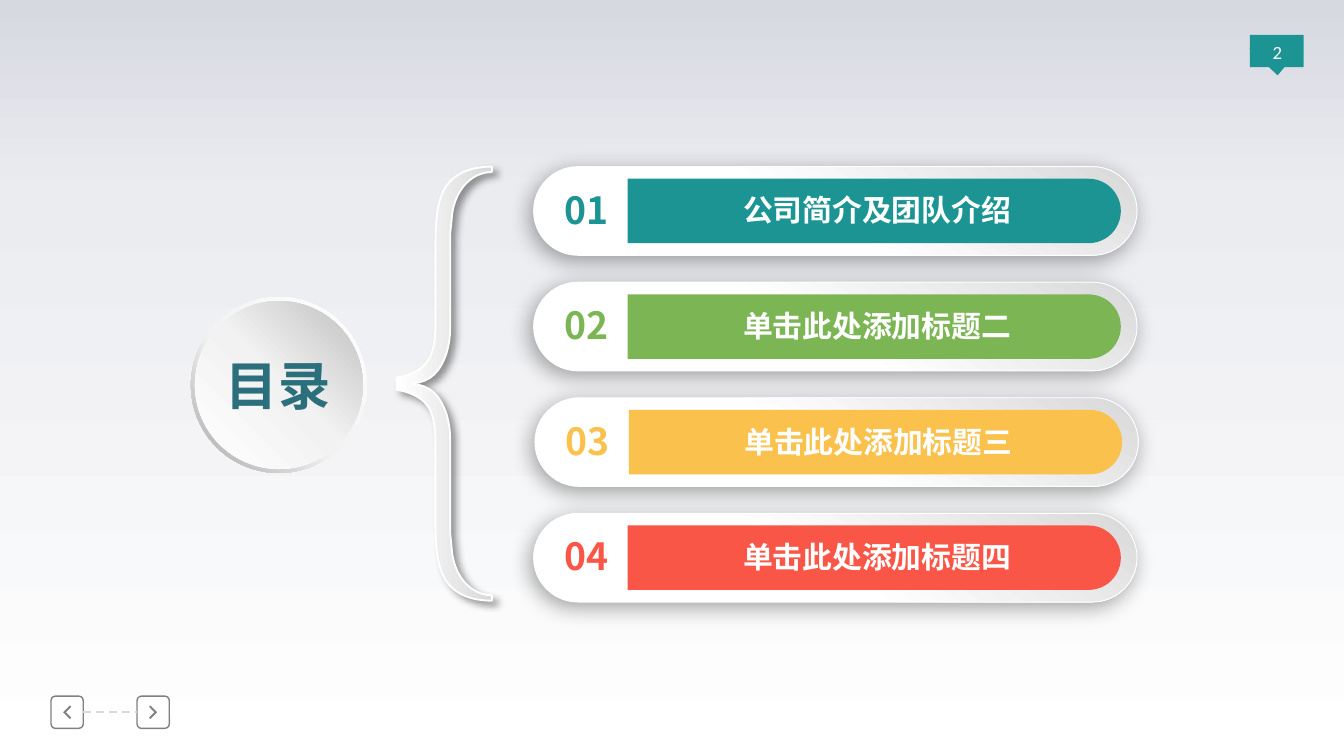
from math import cos, pi, sin

from lxml.etree import SubElement
from pptx import Presentation
from pptx.dml.color import RGBColor
from pptx.enum.dml import MSO_LINE
from pptx.enum.shapes import MSO_CONNECTOR, MSO_SHAPE
from pptx.enum.text import MSO_ANCHOR, MSO_AUTO_SIZE, PP_ALIGN
from pptx.oxml.ns import qn
from pptx.util import Inches, Pt

COLORS = {
    "teal": "1C9494", "green": "7CB554", "yellow": "FAC14D", "red": "F95647",
    "title": "2B6F7D", "white": "FFFFFF", "gray": "808080", "edge": "D9D9D9",
    "sky": "D7D9E1", "haze": "EBECF0", "pearl": "F2F2F2", "silver": "BFBFBF",
    "steel": "A6A6A6", "black": "000000",
}
RGB = {name: RGBColor.from_string(value) for name, value in COLORS.items()}
CJK = "Noto Sans CJK SC"


def write_text(box, text, size, color, font=CJK, bold=True, align=PP_ALIGN.LEFT,
               anchor=MSO_ANCHOR.TOP, wrap=False, grow=True, margins=None):
    """Fill a box with one formatted run; margins are left, top, right, bottom."""
    frame = box.text_frame
    frame.word_wrap = wrap
    frame.vertical_anchor = anchor
    frame.auto_size = MSO_AUTO_SIZE.SHAPE_TO_FIT_TEXT if grow else MSO_AUTO_SIZE.NONE
    if margins:
        (frame.margin_left, frame.margin_top,
         frame.margin_right, frame.margin_bottom) = map(Inches, margins)
    para = frame.paragraphs[0]
    para.alignment = align
    span = para.add_run()
    span.text = text
    span.font.size, span.font.bold, span.font.name = Pt(size), bold, font
    span.font.color.rgb = RGB[color]
    SubElement(span.font._element, qn("a:ea"), typeface=font)


def apply_gradient(owner, angle, *stops):
    """Give a slide background or shape a linear gradient, angle clockwise."""
    fill = owner.background.fill if hasattr(owner, "background") else owner.fill
    fill.gradient()
    fill.gradient_angle = (360 - angle) % 360
    stop_list = owner._element.find(".//" + qn("a:gsLst"))
    for old_stop in list(stop_list):
        stop_list.remove(old_stop)
    for position, color in stops:
        stop = SubElement(stop_list, qn("a:gs"), pos=str(position * 1000))
        SubElement(stop, qn("a:srgbClr"), val=COLORS[color])


deck = Presentation()
deck.slide_width = Inches(10)
deck.slide_height = deck.slide_width * 9 // 16
page = deck.slides.add_slide(deck.slide_layouts[5])
shapes = page.shapes
apply_gradient(page, 90, (0, "sky"), (26, "haze"), (100, "white"))

solid = []      # (shape, color) of the plain shapes without a line
shadowed = []   # (shape, opacity, blur, direction)

# Page number badge
badge = shapes.add_shape(MSO_SHAPE.RECTANGLE, Inches(9.3), Inches(0.26), Inches(0.4), Inches(0.24))
pointer = shapes.add_shape(MSO_SHAPE.ISOSCELES_TRIANGLE, Inches(9.3), Inches(0.35),
                           Inches(0.4), Inches(0.21))
pointer.rotation = 176.8
solid += [(badge, "teal"), (pointer, "teal")]
number = shapes.add_textbox(Inches(9.32), Inches(0.22), Inches(0.37), Inches(0.38))
write_text(number, "2", 10, "white", font="Calibri", bold=False, align=PP_ALIGN.CENTER,
           anchor=MSO_ANCHOR.MIDDLE, wrap=True, grow=False, margins=(0, 0, 0, 0.05))

# Previous and next buttons
buttons = []
middle, button_size = 5.3, 0.24
for center, side in ((0.5, 1), (1.14, -1)):
    button = shapes.add_shape(MSO_SHAPE.ROUNDED_RECTANGLE, Inches(center - button_size / 2),
                              Inches(middle - button_size / 2),
                              Inches(button_size), Inches(button_size))
    button.adjustments[0] = 0.14
    button.fill.background()
    button.line.color.rgb = RGB["gray"]
    button.line.width = Pt(0.75)
    button.shadow.inherit = False
    buttons.append(button)
    arrow = [(Inches(center + side * x), Inches(middle + y)) for x, y in (
        (0.02, -0.05), (0.03, -0.04), (-0.01, 0), (0.03, 0.04), (0.02, 0.05), (-0.03, 0))]
    builder = shapes.build_freeform(*arrow[0])
    builder.add_line_segments(arrow[1:])
    solid.append((builder.convert_to_shape(), "gray"))

link = shapes.add_connector(MSO_CONNECTOR.STRAIGHT, Inches(0.62), Inches(middle),
                            Inches(1.02), Inches(middle))
link.begin_connect(buttons[0], 3)
link.end_connect(buttons[1], 1)
link.line.color.rgb = RGB["edge"]
link.line.width = Pt(1)
link.line.dash_style = MSO_LINE.DASH
SubElement(link._element.spPr, qn("a:effectLst"))

# Agenda rows
agenda = [("公司简介及团队介绍", "teal", 3.97), ("单击此处添加标题二", "green", 3.97),
          ("单击此处添加标题三", "yellow", 3.98), ("单击此处添加标题四", "red", 3.97)]
pitch = 2.58 / 3
for index, (topic, color, left) in enumerate(agenda):
    top = 1.24 + index * pitch
    pill = shapes.add_shape(MSO_SHAPE.ROUNDED_RECTANGLE, Inches(left), Inches(top),
                            Inches(4.49), Inches(0.66))
    pill.adjustments[0] = 0.5
    apply_gradient(pill, 300, (45, "white"), (100, "edge"))
    pill.line.color.rgb = RGB["white"]
    pill.line.width = Pt(0.5)
    shadowed.append((pill, 34, 12, 135))

    radius = 0.24
    arc = [(left + 4.13 + radius * sin(pi * step / 24),
            top + 0.33 - radius * cos(pi * step / 24)) for step in range(25)]
    builder = shapes.build_freeform(Inches(left + 0.7), Inches(top + 0.33 - radius))
    builder.add_line_segments([(Inches(x), Inches(y)) for x, y in
                               arc + [(left + 0.7, top + 0.33 + radius)]])
    solid.append((builder.convert_to_shape(), color))

    label = shapes.add_textbox(Inches(left + 0.13), Inches(top + 0.1), Inches(0.55), Inches(0.44))
    write_text(label, f"{index + 1:02}", 20, color)
    heading = shapes.add_textbox(Inches(left + 1.46), Inches(top + 0.14),
                                 Inches(2.22), Inches(0.37))
    write_text(heading, topic, 16, "white")

# Title disc
ring = shapes.add_shape(MSO_SHAPE.DONUT, Inches(1.42), Inches(2.21), Inches(1.31), Inches(1.31))
ring.adjustments[0] = 0.05
apply_gradient(ring, 135, (0, "white"), (55, "pearl"), (100, "steel"))
disc = shapes.add_shape(MSO_SHAPE.OVAL, Inches(1.45), Inches(2.24), Inches(1.25), Inches(1.25))
apply_gradient(disc, 315, (0, "white"), (51, "pearl"), (100, "silver"))
for part in (ring, disc):
    part.line.fill.background()
    part.shadow.inherit = False

title = shapes.title
title.left, title.top, title.width, title.height = map(Inches, (1.38, 2.63, 1.38, 0.47))
write_text(title, "目录", 28, "title", align=PP_ALIGN.CENTER, wrap=True, margins=(0, 0, 0, 0))
shapes._spTree.append(title._element)  # in front of the disc

# Brace: Bezier curves of the upper half, mirrored for the lower half
curves = [
    ((2.95, 2.81), (3.06, 2.79), (3.14, 2.75), (3.18, 2.69)),
    ((3.18, 2.69), (3.22, 2.64), (3.24, 2.54), (3.24, 2.41)),
    ((3.24, 1.79), (3.24, 1.58), (3.27, 1.44), (3.34, 1.36)),
    ((3.34, 1.36), (3.41, 1.28), (3.52, 1.24), (3.66, 1.24)),
    ((3.66, 1.28), (3.5, 1.28), (3.37, 1.43), (3.36, 1.64)),
    ((3.35, 1.74), (3.35, 1.97), (3.35, 2.21), (3.35, 2.44)),
    ((3.35, 2.44), (3.35, 2.63), (3.27, 2.85), (3.07, 2.85)),
]
upper = []
for curve in curves:
    for step in range(13):
        t = step / 12
        weights = ((1 - t) ** 3, 3 * t * (1 - t) ** 2, 3 * t ** 2 * (1 - t), t ** 3)
        upper.append(tuple(sum(w * point[axis] for w, point in zip(weights, curve))
                           for axis in (0, 1)))
lower = [(x, 5.71 - y) for x, y in reversed(upper)]
edge = [(Inches(x), Inches(y)) for x, y in upper + lower]
builder = shapes.build_freeform(*edge[0])
builder.add_line_segments(edge[1:])
brace = builder.convert_to_shape()
apply_gradient(brace, 0, (0, "white"), (100, "edge"))
brace.line.color.rgb = RGB["white"]
brace.line.width = Pt(1)
shadowed.append((brace, 40, 4, 45))

for shape, color in solid:
    shape.fill.solid()
    shape.fill.fore_color.rgb = RGB[color]
    shape.line.fill.background()
    shape.shadow.inherit = False

for shape, opacity, blur, direction in shadowed:
    shape.shadow.inherit = False
    effects = shape._element.spPr.find(qn("a:effectLst"))
    shadow = SubElement(effects, qn("a:outerShdw"), blurRad=str(Pt(blur)), dist=str(Pt(3)),
                        dir=str(direction * 60000), algn="ctr", rotWithShape="0")
    tint = SubElement(shadow, qn("a:srgbClr"), val=COLORS["black"])
    SubElement(tint, qn("a:alpha"), val=str(opacity * 1000))

deck.save("out.pptx")
